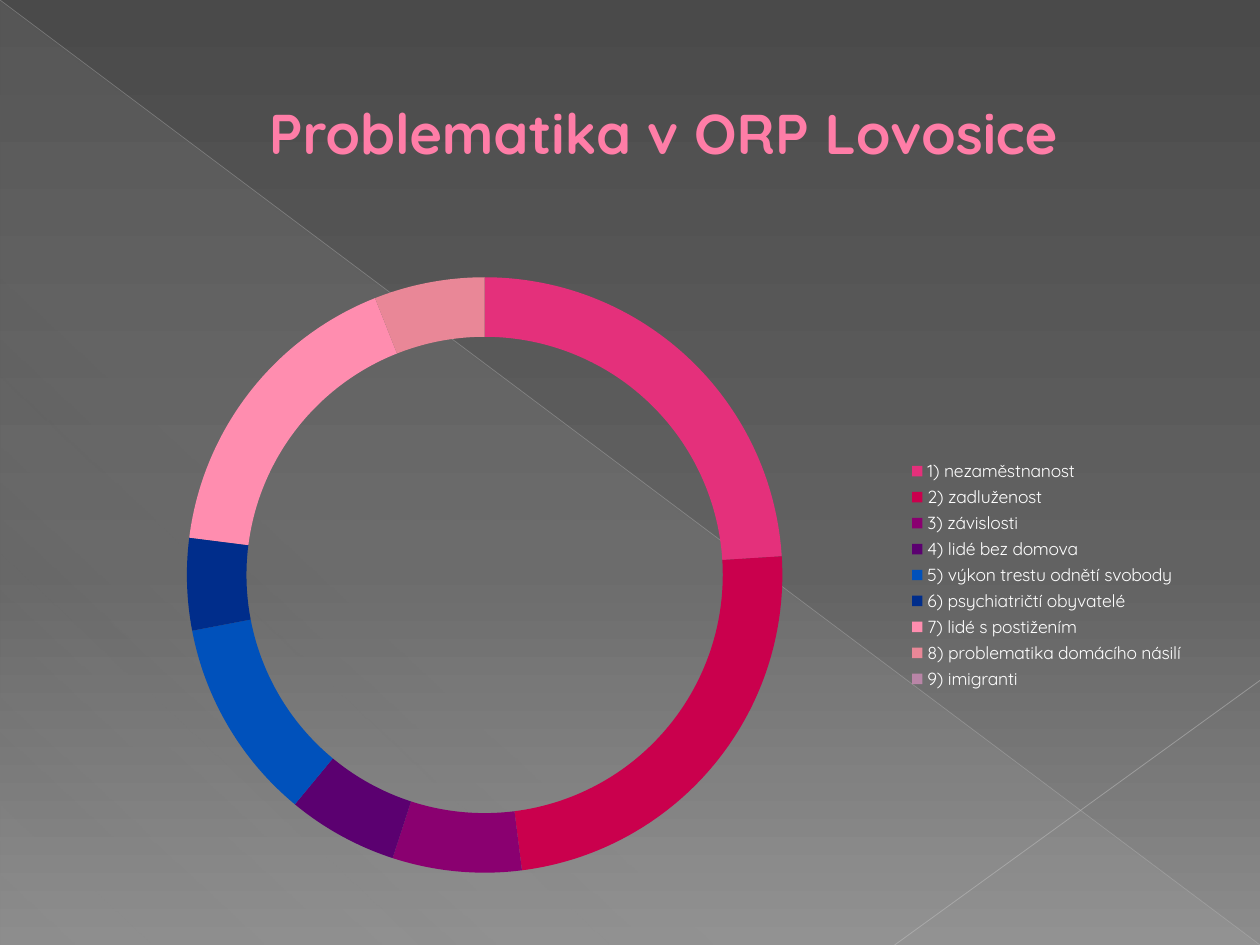
from lxml.etree import SubElement
from pptx import Presentation
from pptx.chart.data import CategoryChartData
from pptx.dml.color import RGBColor
from pptx.enum.chart import XL_CHART_TYPE, XL_LEGEND_POSITION
from pptx.enum.shapes import MSO_CONNECTOR, MSO_SHAPE
from pptx.enum.text import MSO_ANCHOR, PP_ALIGN
from pptx.oxml.ns import qn
from pptx.util import Inches, Pt

WIDTH, HEIGHT = Inches(10), Inches(7.5)
MARGIN = 0.05  # share of the slide width
FONT = "Quicksand"

WHITE = RGBColor(0xFF, 0xFF, 0xFF)
TITLE_PINK = RGBColor(0xFF, 0x7D, 0xA7)
TITLE_EDGE = RGBColor(0xB1, 0x27, 0x61)
DARK_GREY = RGBColor(0x4A, 0x4A, 0x4A)
MID_GREY = RGBColor(0x62, 0x62, 0x62)
LIGHT_GREY = RGBColor(0x8C, 0x8C, 0x8C)
PALE_GREY = RGBColor(0xD2, 0xD2, 0xD2)
DIAGONAL_GREY = RGBColor(0xBF, 0xBF, 0xBF)
CORNER_GREY = RGBColor(0xC6, 0xC6, 0xC6)

# Problem, share in percent, ring colour
PROBLEMS = [
    ("1) nezaměstnanost", 24, RGBColor(0xE4, 0x30, 0x7B)),
    ("2) zadluženost", 24, RGBColor(0xCA, 0x00, 0x4D)),
    ("3) závislosti", 7, RGBColor(0x8A, 0x00, 0x70)),
    ("4) lidé bez domova", 6, RGBColor(0x5B, 0x00, 0x70)),
    ("5) výkon trestu odnětí svobody", 11, RGBColor(0x00, 0x51, 0xBB)),
    ("6) psychiatričtí obyvatelé", 5, RGBColor(0x00, 0x2D, 0x8B)),
    ("7) lidé s postižením", 17, RGBColor(0xFF, 0x8D, 0xAF)),
    ("8) problematika domácího násilí", 6, RGBColor(0xE9, 0x87, 0x97)),
    ("9) imigranti", 0, RGBColor(0xB9, 0x85, 0xA7)),
]
EMPTY_RINGS = 3


def box(left, top, width, height):
    """Turn shares of the slide into lengths."""
    return (int(WIDTH * left), int(HEIGHT * top),
            int(WIDTH * width), int(HEIGHT * height))


def add_color(parent, color, opacity=100):
    clr = SubElement(parent, qn("a:srgbClr"), val=str(color))
    if opacity < 100:
        SubElement(clr, qn("a:alpha"), val=str(opacity * 1000))


def set_gradient(fill, owner, angle, stops):
    """Fill with (position, colour, opacity) stops, angle clockwise."""
    fill.gradient()
    fill.gradient_angle = 360 - angle
    stop_list = next(owner.iter(qn("a:gsLst")))
    for old in list(stop_list):
        stop_list.remove(old)
    for position, color, opacity in stops:
        stop = SubElement(stop_list, qn("a:gs"), pos=str(position * 1000))
        add_color(stop, color, opacity)


def add_ray(slide, start, end, color, weight, opacity):
    ray = slide.shapes.add_connector(
        MSO_CONNECTOR.STRAIGHT,
        int(WIDTH * start[0]), int(HEIGHT * start[1]),
        int(WIDTH * end[0]), int(HEIGHT * end[1]))
    ray.line.width = Pt(weight)
    ray.line.color.rgb = color
    clr = next(ray._element.spPr.iter(qn("a:srgbClr")))
    SubElement(clr, qn("a:alpha"), val=str(opacity * 1000))
    SubElement(ray._element.spPr, qn("a:effectLst"))


def add_backdrop(slide):
    set_gradient(slide.background.fill, slide._element, 90,
                 [(0, DARK_GREY, 100), (60, MID_GREY, 100),
                  (100, LIGHT_GREY, 100)])
    sheen = slide.shapes.add_shape(MSO_SHAPE.RIGHT_TRIANGLE, *box(0, 0, 1, 1))
    sheen.shadow.inherit = False
    sheen.line.fill.background()
    set_gradient(sheen.fill, sheen._element, 133,
                 [(0, PALE_GREY, 10), (70, PALE_GREY, 8), (100, PALE_GREY, 1)])
    add_ray(slide, (0, 0), (1, 1), DIAGONAL_GREY, 0.39, 35)
    add_ray(slide, (1, 0.72), (0.71, 1), CORNER_GREY, 0.47, 45)


def write_text(frame, text, size, color, bold=False, align=PP_ALIGN.LEFT,
               indent=0, edge=None, edge_width=0.5):
    frame.word_wrap = True
    frame.vertical_anchor = MSO_ANCHOR.MIDDLE
    paragraph = frame.paragraphs[0]
    paragraph.alignment = align
    properties = paragraph._p.get_or_add_pPr()
    properties.set("marL", str(Inches(indent)))
    properties.set("indent", "0")
    run = paragraph.add_run()
    run.text = text
    font = run.font
    font.name, font.size, font.bold = FONT, Pt(size), bold
    font.color.rgb = color
    if edge is not None:
        outline = SubElement(font._element, qn("a:ln"), w=str(Pt(edge_width)))
        add_color(SubElement(outline, qn("a:solidFill")), edge)
        font._element.insert(0, outline)


def add_title(slide, text):
    title = slide.shapes.title
    title.left, title.top, title.width, title.height = box(
        MARGIN, 0.04, 1 - 2 * MARGIN, 0.2)
    write_text(title.text_frame, text, size=32, color=TITLE_PINK, bold=True,
               align=PP_ALIGN.CENTER, indent=0.53, edge=TITLE_EDGE)
    # Title lies in front of the backdrop
    slide.shapes._spTree.append(title._element)


def add_problem_ring(slide):
    names, shares, colors = zip(*PROBLEMS)
    data = CategoryChartData()
    data.categories = names
    # Empty inner rings keep the visible ring thin
    for number in range(1, EMPTY_RINGS + 1):
        data.add_series(f"Series {number}", [None] * len(names))
    data.add_series(f"Series {EMPTY_RINGS + 1}", shares)

    chart = slide.shapes.add_chart(
        XL_CHART_TYPE.DOUGHNUT,
        *box(MARGIN, 0.275, 1 - 2 * MARGIN, 0.667), data).chart
    chart.has_title = False
    chart.font.name, chart.font.size = FONT, Pt(10)
    chart.font.color.rgb = WHITE
    chart.has_legend = True
    chart.legend.position = XL_LEGEND_POSITION.RIGHT
    chart.legend.include_in_layout = False

    rings = chart.plots[0]
    rings.vary_by_categories = True
    for ring in rings.series:
        for index, color in enumerate(colors):
            part = ring.points[index].format
            part.fill.solid()
            part.fill.fore_color.rgb = color
            part.line.fill.background()


def main():
    deck = Presentation()
    deck.slide_width, deck.slide_height = WIDTH, HEIGHT
    slide = deck.slides.add_slide(deck.slide_layouts[5])
    add_backdrop(slide)
    add_title(slide, "Problematika v ORP Lovosice")
    add_problem_ring(slide)
    deck.save("out.pptx")


if __name__ == "__main__":
    main()
